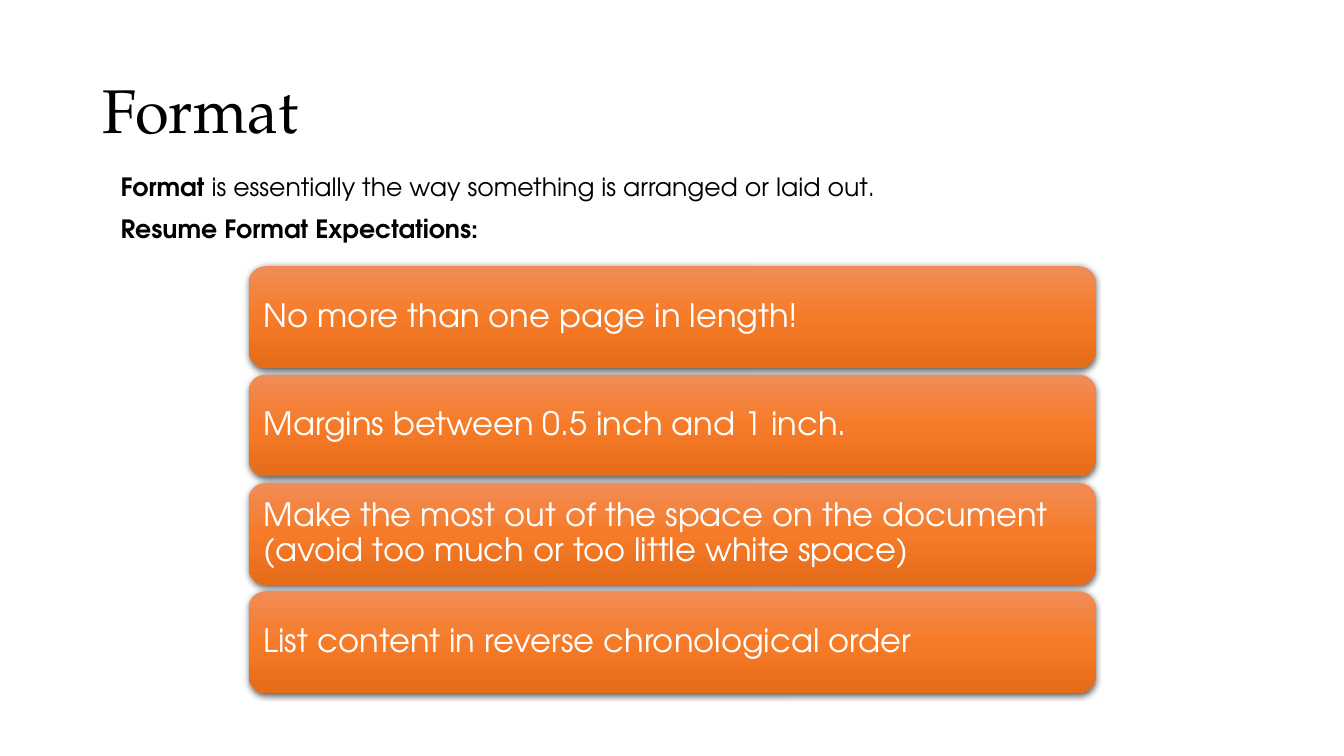
from lxml.etree import SubElement
from pptx import Presentation
from pptx.dml.color import RGBColor
from pptx.enum.shapes import MSO_SHAPE
from pptx.enum.text import MSO_ANCHOR, PP_ALIGN
from pptx.oxml.ns import qn
from pptx.util import Cm, Pt

TITLE = "Format"
INTRO = [
    [("Format ", True), ("is essentially the way something is arranged or laid out.", False)],
    [("Resume Format Expectations:", True)],
]
EXPECTATIONS = [
    "No more than one page in length!",
    "Margins between 0.5 inch and 1 inch.",
    "Make the most out of the space on the document (avoid too much or too little white space)",
    "List content in reverse chronological order",
]
COLORS = {"ink": "000000", "card_text": "FFFFFF", "shadow": "000000",
          "top": "F18C57", "middle": "F67B28", "bottom": "E56C19"}
GRADIENT = [(0, "top"), (50, "middle"), (100, "bottom")]
HEADING_FONT, BODY_FONT = "TeX Gyre Pagella", "TeX Gyre Adventor"
CARD_LEFT, CARD_TOP, CARD_WIDTH, CARD_HEIGHT, CARD_PITCH = 6.27, 6.71, 21.34, 2.56, 2.73
CARD_INSET = Cm(0.25)


def style_run(run, size, font, color, bold=False):
    run.font.size = Pt(size)
    run.font.name = font
    run.font.bold = bold
    run.font.color.rgb = RGBColor.from_string(COLORS[color])


def add_text_area(slide, left, top, width, height, anchor):
    frame = slide.shapes.add_textbox(Cm(left), Cm(top), Cm(width), Cm(height)).text_frame
    frame.word_wrap = True
    frame.vertical_anchor = anchor
    return frame


def add_color(parent, color):
    return SubElement(parent, qn("a:srgbClr"), val=COLORS[color])


def paint_card(card):
    card.fill.gradient()
    card.fill.gradient_angle = 270
    card.line.fill.background()
    card.shadow.inherit = False
    properties = card.element.spPr
    stops = properties.find(qn("a:gradFill")).find(qn("a:gsLst"))
    for stop in list(stops):
        stops.remove(stop)
    for position, color in GRADIENT:
        add_color(SubElement(stops, qn("a:gs"), pos=str(position * 1000)), color)
    shadow = SubElement(properties.find(qn("a:effectLst")), qn("a:outerShdw"),
                        blurRad=str(Pt(4.5)), dist=str(Pt(1.5)), dir="5400000",
                        algn="ctr", rotWithShape="0")
    SubElement(add_color(shadow, "shadow"), qn("a:alpha"), val="63000")


def add_card(slide, index, expectation):
    card = slide.shapes.add_shape(
        MSO_SHAPE.ROUNDED_RECTANGLE, Cm(CARD_LEFT), Cm(CARD_TOP + index * CARD_PITCH),
        Cm(CARD_WIDTH), Cm(CARD_HEIGHT))
    paint_card(card)
    frame = card.text_frame
    frame.word_wrap = True
    frame.vertical_anchor = MSO_ANCHOR.MIDDLE
    frame.margin_left = frame.margin_right = CARD_INSET
    frame.margin_top = frame.margin_bottom = CARD_INSET
    frame.text = expectation
    line = frame.paragraphs[0]
    line.alignment = PP_ALIGN.LEFT
    line.line_spacing = 0.9
    style_run(line.runs[0], 23, BODY_FONT, "card_text")


def main():
    deck = Presentation()
    deck.slide_width, deck.slide_height = Cm(33.87), Cm(19.05)
    slide = deck.slides.add_slide(deck.slide_layouts[6])

    heading = add_text_area(slide, 2.33, 1.01, 29.21, 3.68, MSO_ANCHOR.MIDDLE)
    heading.text = TITLE
    heading.paragraphs[0].line_spacing = 0.9
    style_run(heading.paragraphs[0].runs[0], 44, HEADING_FONT, "ink")

    intro = add_text_area(slide, 2.79, 4.29, 29.21, 2.2, MSO_ANCHOR.TOP)
    for index, parts in enumerate(INTRO):
        line = intro.add_paragraph() if index else intro.paragraphs[0]
        line.line_spacing = 0.9
        if index:
            line.space_before = Pt(10)
        for words, bold in parts:
            run = line.add_run()
            run.text = words
            style_run(run, 18, BODY_FONT, "ink", bold)

    for index, expectation in enumerate(EXPECTATIONS):
        add_card(slide, index, expectation)

    deck.save("out.pptx")


if __name__ == "__main__":
    main()
